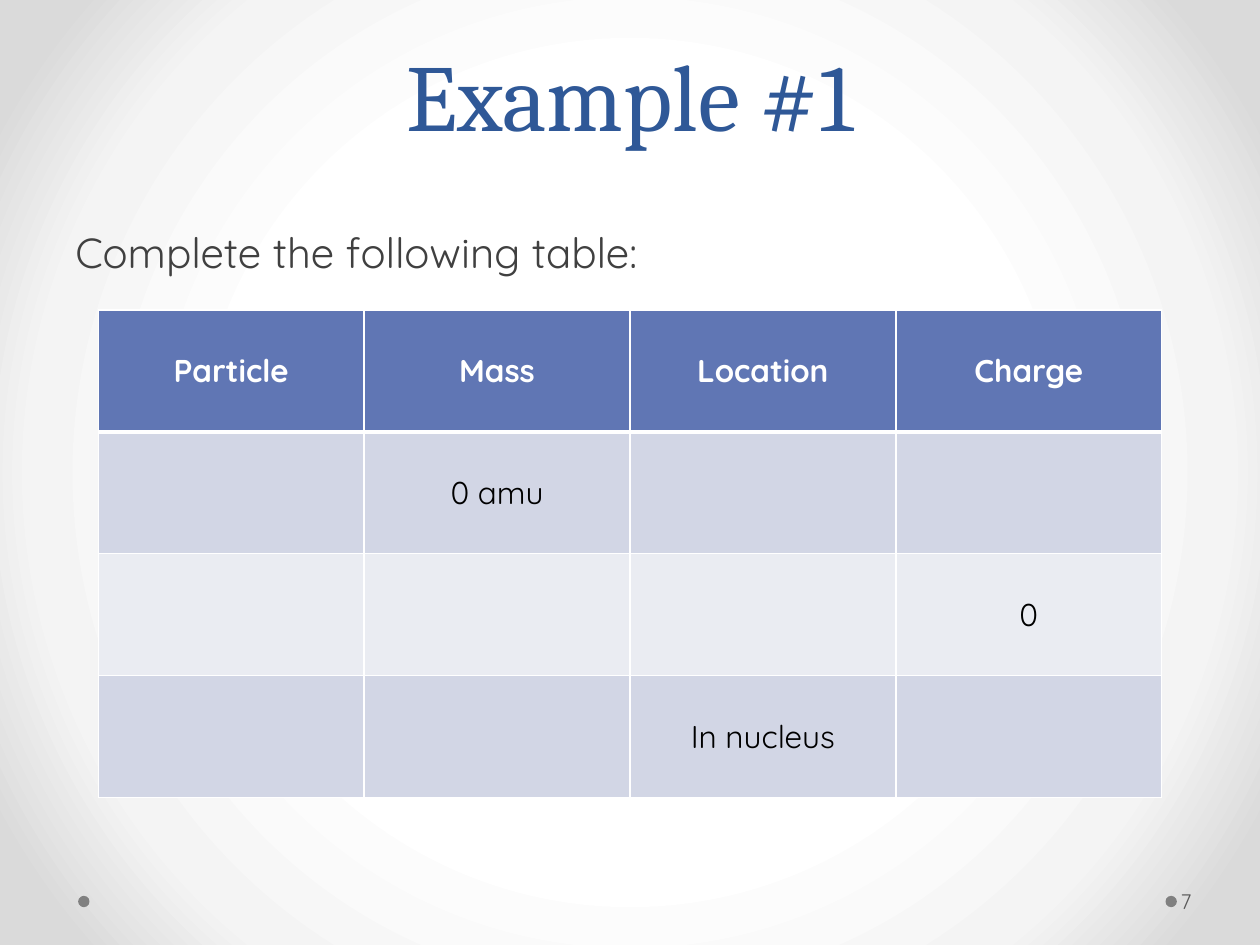
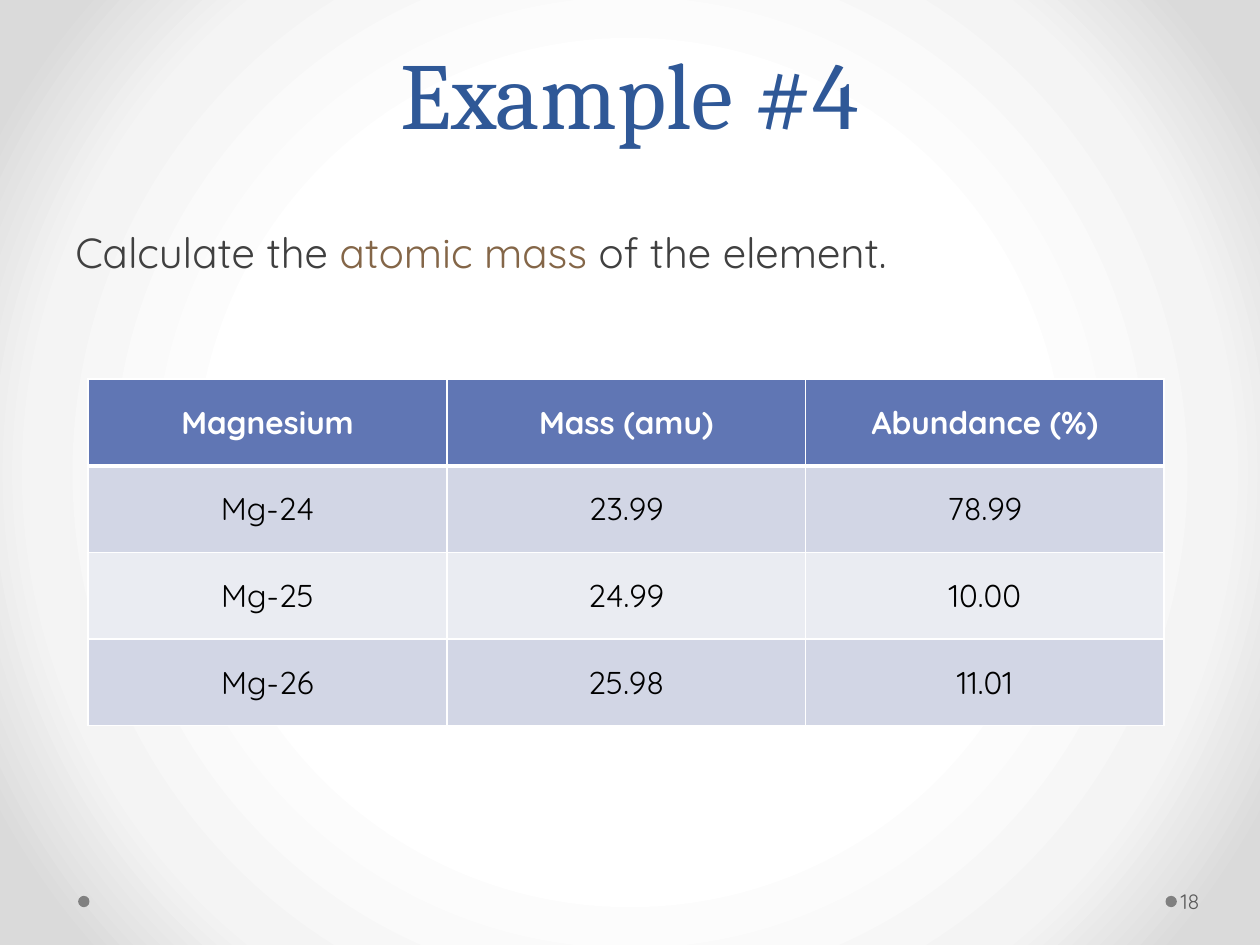
from pptx import Presentation
from pptx.dml.color import RGBColor
from pptx.enum.shapes import MSO_SHAPE as Preset
from pptx.enum.text import MSO_ANCHOR as Anchor, PP_ALIGN as Align
from pptx.oxml import parse_xml
from pptx.oxml.ns import nsdecls
from pptx.util import Inches, Pt

# Shared look
HEADING_FONT, BODY_FONT = "Cambria", "Quicksand"
TITLE_BLUE, BODY_GREY, ACCENT_BROWN = "2F5897", "404040", "846648"
DOT_GREY, NUMBER_GREY = "808080", "595959"
WHITE, BLACK = "FFFFFF", "000000"
HEADER_BLUE, BANDS = "6076B4", ("D2D6E5", "EAECF2")
GLOW_STOPS = ((50, WHITE), (76, "F4F4F4"), (92, "DADADA"))
DOT_SIZE, DOT_TOP, DOT_LEFTS = 0.09, 7.11, (9.25, 0.62)


def color(hex_value):
    return RGBColor.from_string(hex_value)


def add_run(paragraph, text, size, hex_value, font=BODY_FONT, bold=False):
    run = paragraph.add_run()
    run.text = text
    run.font.name = font
    run.font.size = Pt(size)
    run.font.bold = bold
    run.font.color.rgb = color(hex_value)


def add_text_frame(slide, left, top, width, height, anchor=Anchor.TOP):
    box = slide.shapes.add_textbox(
        Inches(left), Inches(top), Inches(width), Inches(height))
    frame = box.text_frame
    frame.word_wrap = True
    frame.vertical_anchor = anchor
    return frame


# Background and footer
def paint_glow(slide):
    stops = "".join(
        f'<a:gs pos="{percent * 1000}"><a:srgbClr val="{shade}"/></a:gs>'
        for percent, shade in GLOW_STOPS)
    glow = parse_xml(
        f'<p:bg {nsdecls("p", "a")}><p:bgPr><a:gradFill rotWithShape="1">'
        f'<a:gsLst>{stops}</a:gsLst><a:path path="circle">'
        '<a:fillToRect l="50000" t="50000" r="50000" b="50000"/></a:path>'
        '</a:gradFill><a:effectLst/></p:bgPr></p:bg>')
    slide.element.cSld.insert(0, glow)


def add_footer(slide, number):
    for left in DOT_LEFTS:
        dot = slide.shapes.add_shape(
            Preset.OVAL, Inches(left), Inches(DOT_TOP),
            Inches(DOT_SIZE), Inches(DOT_SIZE))
        dot.shadow.inherit = False
        dot.fill.solid()
        dot.fill.fore_color.rgb = color(DOT_GREY)
        dot.line.fill.background()
    frame = add_text_frame(slide, 9.34, 6.95, 0.61, 0.4, Anchor.MIDDLE)
    frame.margin_left = Inches(0.03)
    frame.margin_right = Inches(0.05)
    add_run(frame.paragraphs[0], str(number), 12, NUMBER_GREY)


# Title and task
def add_title(slide, text, top):
    frame = add_text_frame(slide, 0.5, top, 9, 1.22, Anchor.BOTTOM)
    heading = frame.paragraphs[0]
    heading.alignment = Align.CENTER
    heading.line_spacing = Pt(58)
    add_run(heading, text, 54, TITLE_BLUE, HEADING_FONT)


def add_task(slide, parts):
    task = add_text_frame(slide, 0.5, 1.75, 9, 4.95).paragraphs[0]
    task.space_before = Pt(5)
    for text, hex_value in parts:
        add_run(task, text, 24, hex_value)


# Table
def set_borders(cell, top=1, bottom=1):
    properties = cell._tc.get_or_add_tcPr()
    widths = (("lnL", 1), ("lnR", 1), ("lnT", top), ("lnB", bottom))
    for position, (side, width) in enumerate(widths):
        properties.insert(position, parse_xml(
            f'<a:{side} {nsdecls("a")} w="{Pt(width)}"><a:solidFill>'
            f'<a:srgbClr val="{WHITE}"/></a:solidFill></a:{side}>'))


def add_data_table(slide, rows, left, top, width, height):
    table = slide.shapes.add_table(
        len(rows), len(rows[0]), Inches(left), Inches(top),
        Inches(width), Inches(height)).table
    for row in table.rows:
        row.height = Inches(height / len(rows))
    for r, row in enumerate(rows):
        header = r == 0
        for c, text in enumerate(row):
            cell = table.cell(r, c)
            cell.vertical_anchor = Anchor.MIDDLE
            cell.fill.solid()
            cell.fill.fore_color.rgb = color(
                HEADER_BLUE if header else BANDS[(r - 1) % 2])
            set_borders(cell, top=3 if r == 1 else 1, bottom=3 if header else 1)
            if text:
                entry = cell.text_frame.paragraphs[0]
                entry.alignment = Align.CENTER
                add_run(entry, text, 18, WHITE if header else BLACK, bold=header)


def add_example(deck, title, title_top, task, rows, table_box, number):
    slide = deck.slides.add_slide(deck.slide_layouts[6])
    paint_glow(slide)
    add_title(slide, title, title_top)
    add_task(slide, task)
    add_data_table(slide, rows, *table_box)
    add_footer(slide, number)


def main():
    deck = Presentation()
    deck.slide_width, deck.slide_height = Inches(10), Inches(7.5)

    # Subatomic particles
    particles = (
        ("Particle", "Mass", "Location", "Charge"),
        ("", "0 amu", "", ""),
        ("", "", "", "0"),
        ("", "", "In nucleus", ""),
    )
    add_example(deck, "Example #1", 0.02,
                [("Complete the following table:", BODY_GREY)],
                particles, (0.78, 2.46, 8.44, 3.87), 7)

    # Average atomic mass
    isotopes = (
        ("Magnesium", "Mass (amu)", "Abundance (%)"),
        ("Mg-24", "23.99", "78.99"),
        ("Mg-25", "24.99", "10.00"),
        ("Mg-26", "25.98", "11.01"),
    )
    add_example(deck, "Example #4", 0.01,
                [("Calculate the ", BODY_GREY), ("atomic mass ", ACCENT_BROWN),
                 ("of the element.", BODY_GREY)],
                isotopes, (0.7, 3.01, 8.54, 2.75), 18)

    deck.save("out.pptx")


if __name__ == "__main__":
    main()
